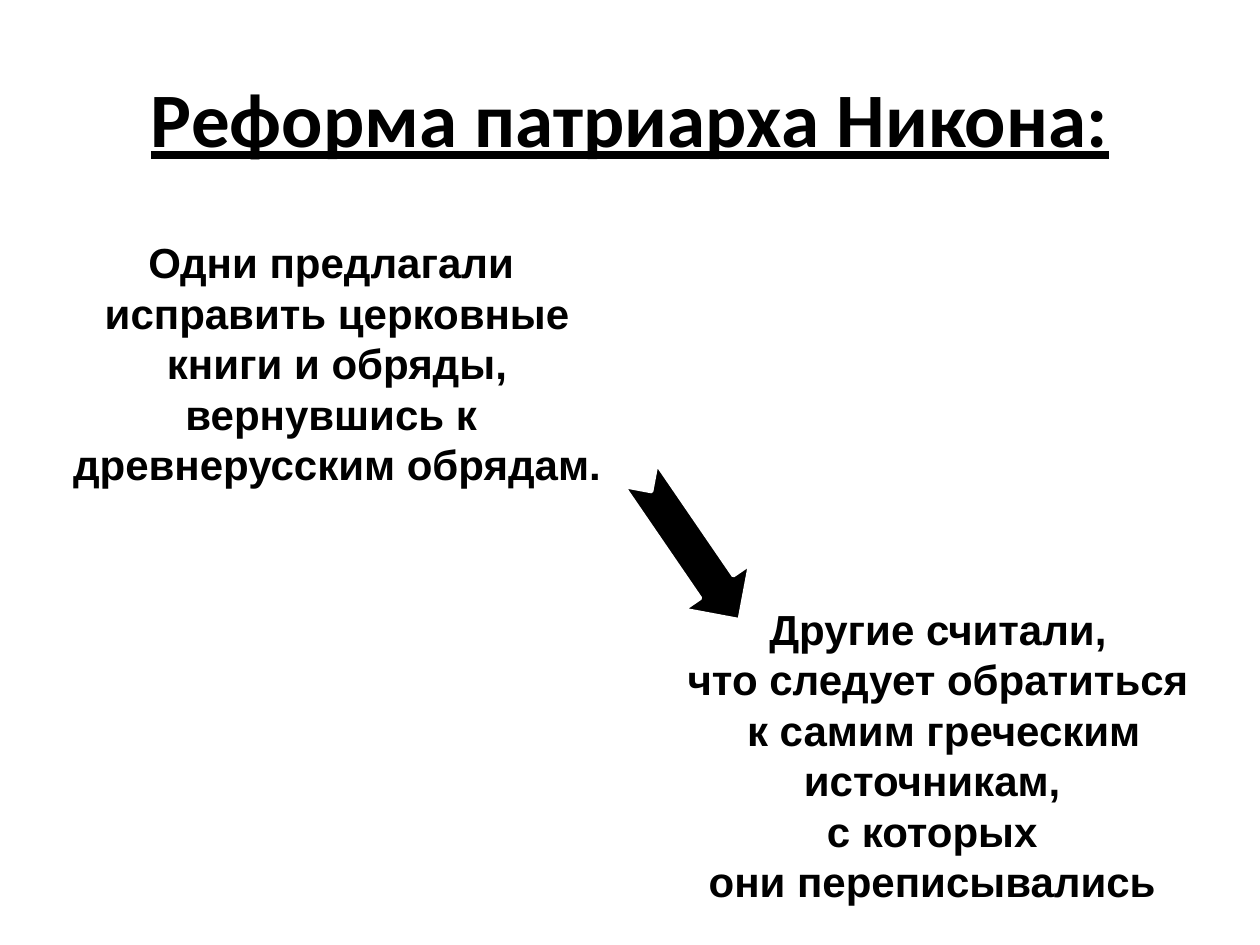
from pptx import Presentation
from pptx.dml.color import RGBColor
from pptx.enum import shapes, text
from pptx.util import Inches, Pt

BLACK = RGBColor(0, 0, 0)
WHITE = RGBColor(255, 255, 255)

TITLE = "Реформа патриарха Никона:"
TITLE_BOX = (0.5, 0.3, 9, 1.25)
TITLE_FONT = {"name": "Calibri", "size": Pt(44), "bold": True, "underline": True}
OPINION_FONT = {"name": "Arial", "size": Pt(24), "bold": True}
OPINIONS = [
    ((0.35, 1.7, 4.65, 2.36), [
        "Одни предлагали ",
        "исправить церковные",
        " книги и обряды, ",
        "вернувшись к ",
        "древнерусским обрядам.",
    ]),
    ((5.16, 4.77, 4.57, 2.44), [
        " Другие считали, ",
        "что следует обратиться",
        " к самим греческим",
        "источникам, ",
        "с которых ",
        "они переписывались ",
    ]),
]
ARROW_BOX = (4.78, 4.03, 1.39, 0.63)
ARROW_ANGLE = 55.6


def inches(box):
    return [Inches(value) for value in box]


def write(shape, lines, font_format, wrap):
    frame = shape.text_frame
    frame.word_wrap = wrap
    frame.vertical_anchor = text.MSO_ANCHOR.MIDDLE
    frame.text = "\n".join(lines)
    for paragraph in frame.paragraphs:
        paragraph.alignment = text.PP_ALIGN.CENTER
        for run in paragraph.runs:
            for name, value in font_format.items():
                setattr(run.font, name, value)
            run.font.color.rgb = BLACK


def add_shape(slide, kind, box):
    shape = slide.shapes.add_shape(kind, *inches(box))
    shape.shadow.inherit = False
    return shape


def main():
    presentation = Presentation()
    presentation.slide_width, presentation.slide_height = inches((10, 7.5))
    slide = presentation.slides.add_slide(presentation.slide_layouts[5])

    title = slide.shapes.title
    title.left, title.top, title.width, title.height = inches(TITLE_BOX)
    write(title, [TITLE], TITLE_FONT, True)

    for box, lines in OPINIONS:
        opinion = add_shape(slide, shapes.MSO_SHAPE.ROUNDED_RECTANGLE, box)
        opinion.fill.background()
        opinion.line.fill.background()
        write(opinion, lines, OPINION_FONT, False)

    arrow = add_shape(slide, shapes.MSO_SHAPE.NOTCHED_RIGHT_ARROW, ARROW_BOX)
    arrow.rotation = ARROW_ANGLE
    arrow.fill.solid()
    arrow.fill.fore_color.rgb = BLACK
    arrow.line.color.rgb = WHITE
    arrow.line.width = Pt(2)

    presentation.save("out.pptx")


if __name__ == "__main__":
    main()
